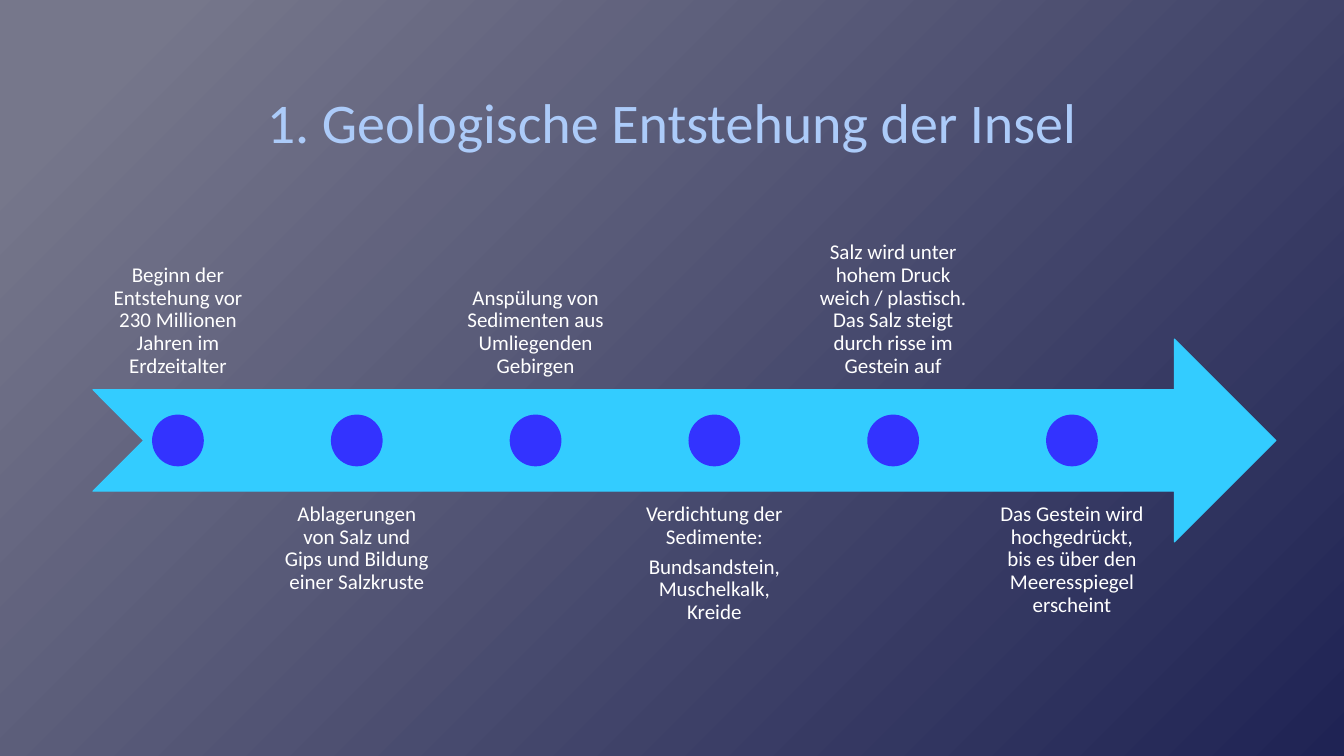
from lxml import etree
from pptx import Presentation
from pptx import util as u
from pptx.dml.color import RGBColor
from pptx.enum import shapes, text
from pptx.oxml import parse_xml

PX = 12192000 / 1344
FONT = "Calibri"
COLORS = {
    "sky": "76778B",
    "night": "1F2354",
    "title": "ACCBF9",
    "text": "FFFFFF",
    "arrow": "33CCFF",
    "dot": "3333FF",
}
STAGES = [
    ["Beginn der Entstehung vor 230 Millionen Jahren im Erdzeitalter"],
    ["Ablagerungen von Salz und Gips und Bildung einer Salzkruste"],
    ["Anspülung von Sedimenten aus Umliegenden Gebirgen"],
    ["Verdichtung der Sedimente:", "Bundsandstein, Muschelkalk, Kreide"],
    ["Salz wird unter hohem Druck weich / plastisch. "
     "Das Salz steigt durch risse im Gestein auf"],
    ["Das Gestein wird hochgedrückt, bis es über den Meeresspiegel erscheint"],
]
NS = 'xmlns:a="http://schemas.openxmlformats.org/drawingml/2006/main"'
OUTLINE = f"""<a:ln {NS} w="9525"><a:solidFill><a:srgbClr val="404040">
<a:alpha val="10000"/></a:srgbClr></a:solidFill></a:ln>"""
SHADOW = f"""<a:effectLst {NS}><a:outerShdw blurRad="38100" dist="25400" dir="2700000">
<a:srgbClr val="000000"><a:alpha val="50000"/></a:srgbClr></a:outerShdw></a:effectLst>"""


def px(*lengths):
    return [u.Emu(round(length * PX)) for length in lengths]


def rgb(name):
    return RGBColor.from_string(COLORS[name])


def add_text(slide, box, paragraphs, *, size, color, anchor, inset=0,
             line_spacing=1.0, space_after=0):
    """Add a centred text box and return its runs."""
    frame = slide.shapes.add_textbox(*px(*box)).text_frame
    frame.word_wrap = True
    frame.vertical_anchor = anchor
    (frame.margin_left, frame.margin_top,
     frame.margin_right, frame.margin_bottom) = px(*[inset] * 4)
    runs = []
    for i, words in enumerate(paragraphs):
        paragraph = frame.add_paragraph() if i else frame.paragraphs[0]
        paragraph.alignment = text.PP_ALIGN.CENTER
        paragraph.line_spacing = line_spacing
        paragraph.space_after = u.Pt(space_after)
        run = paragraph.add_run()
        run.text = words
        run.font.name = FONT
        run.font.size = u.Pt(size)
        run.font.color.rgb = rgb(color)
        runs.append(run)
    return runs


def add_solid(slide, kind, box, color, line_width):
    shape = slide.shapes.add_shape(kind, *px(*box))
    shape.shadow.inherit = False
    shape.fill.solid()
    shape.fill.fore_color.rgb = rgb(color)
    shape.line.color.rgb = rgb(color)
    shape.line.width = u.Pt(line_width)


def paint_background(slide):
    fill = slide.background.fill
    fill.gradient()
    fill.gradient_angle = 315
    for stop, color, position in zip(fill.gradient_stops, ("sky", "night"), (0.08, 1)):
        stop.color.rgb = rgb(color)
        stop.position = position


def add_title(slide, box, title):
    run, = add_text(slide, box, [title], size=40, color="title",
                    anchor=text.MSO_ANCHOR.MIDDLE)
    properties = run.font.fill._xPr
    properties.insert(0, parse_xml(OUTLINE))
    properties.find("{*}solidFill").addnext(parse_xml(SHADOW))


def add_timeline(slide, box, stages):
    """Draw the arrow in the box, with stages alternately above and below its shaft."""
    left, top, width, height = box
    middle = top + height / 2
    shaft_top, shaft_bottom = top + height / 4, top + height * 3 / 4
    label_width, label_height, dot = 172, 203, 50
    first, step = left + 85, 178.8
    add_solid(slide, shapes.MSO_SHAPE.NOTCHED_RIGHT_ARROW, box, "arrow", 0.75)
    for i, stage in enumerate(stages):
        center = first + i * step
        above = i % 2 == 0
        label_top = shaft_top - label_height if above else shaft_bottom
        add_text(slide, (center - label_width / 2, label_top, label_width, label_height),
                 stage, size=15, color="text", inset=12, line_spacing=0.9, space_after=5.25,
                 anchor=text.MSO_ANCHOR.BOTTOM if above else text.MSO_ANCHOR.TOP)
        add_solid(slide, shapes.MSO_SHAPE.OVAL,
                  (center - dot / 2, middle - dot / 2, dot, dot), "dot", 1.25)


def main():
    deck = Presentation()
    deck.slide_width, deck.slide_height = px(1344, 756)
    slide = deck.slides.add_slide(deck.slide_layouts[6])
    paint_background(slide)
    add_title(slide, (101, 68, 1141, 107), "1. Geologische Entstehung der Insel")
    add_timeline(slide, (93, 339, 1183, 203), STAGES)
    deck.save("out.pptx")


if __name__ == "__main__":
    main()
